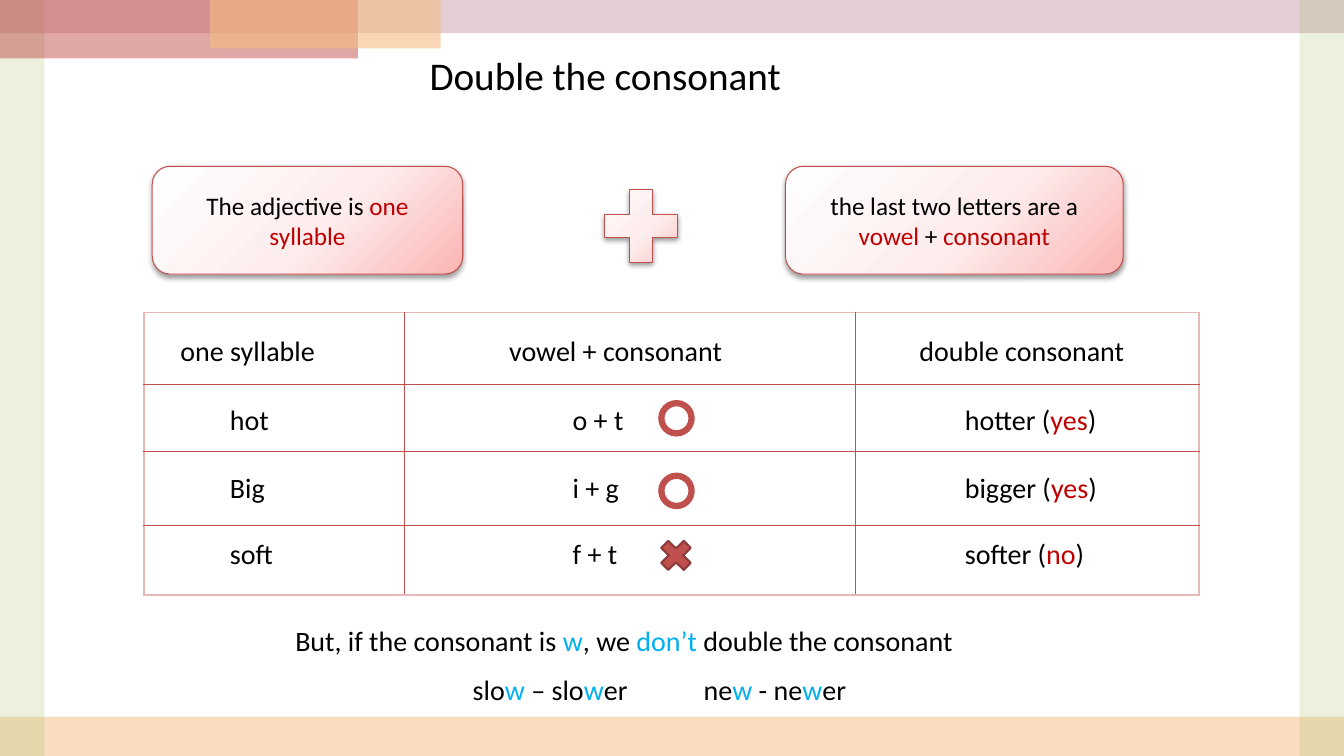
from dataclasses import dataclass
from typing import Any

from lxml.etree import SubElement
from pptx import Presentation
from pptx.dml.color import RGBColor
from pptx.enum.shapes import MSO_SHAPE as Preset
from pptx.enum.text import MSO_ANCHOR as Anchor, MSO_AUTO_SIZE as AutoSize, PP_ALIGN as Align
from pptx.oxml import parse_xml
from pptx.oxml.ns import nsdecls, qn
from pptx.util import Inches, Pt

Runs = list[tuple[str, str]]

COLORS = {
    "black": "000000",
    "white": "FFFFFF",
    "red": "C00000",
    "blue": "00B0F0",
    "brick": "C0504D",
    "dark brick": "8E3B39",
    "rose": "E6B9B8",
    "peach": "F5BC83",
    "mauve": "CC9EAC",
    "green": "9BBB59",
}
CARD_STOPS = {0: "FFFEFE", 55: "FDEDED", 100: "FBB5B4"}


@dataclass(frozen=True)
class Box:
    left: float
    top: float
    width: float
    height: float

    def lengths(self) -> tuple[int, ...]:
        return tuple(Inches(n) for n in (self.left, self.top, self.width, self.height))


@dataclass(frozen=True)
class Band:
    box: Box
    color: str
    opacity: int


@dataclass(frozen=True)
class Card:
    box: Box
    preset: Preset
    runs: Runs


@dataclass(frozen=True)
class Mark:
    box: Box
    preset: Preset
    fill: str
    line: str
    weight: float


@dataclass(frozen=True)
class Note:
    box: Box
    runs: Runs


@dataclass(frozen=True)
class Row:
    height: float
    top_margin: float
    left_margins: tuple[float, ...]
    cells: list[Runs]


BANDS = [
    Band(Box(0, 7.11, 13.33, 0.39), "peach", 50),
    Band(Box(0, 0, 13.33, 0.33), "mauve", 50),
    Band(Box(0, 0, 0.44, 7.5), "green", 20),
    Band(Box(0, 0, 3.55, 0.58), "brick", 50),
    Band(Box(2.08, 0, 2.29, 0.48), "peach", 60),
    Band(Box(12.89, 0, 0.44, 7.5), "green", 20),
]
CARDS = [
    Card(Box(1.51, 1.65, 3.08, 1.07), Preset.ROUNDED_RECTANGLE,
         [("The adjective is ", "black"), ("one syllable", "red")]),
    Card(Box(7.79, 1.65, 3.35, 1.07), Preset.ROUNDED_RECTANGLE,
         [("the last two letters are a ", "black"), ("vowel", "red"),
          (" + ", "black"), ("consonant", "red")]),
    Card(Box(5.87, 1.75, 0.98, 0.98), Preset.MATH_PLUS, []),
]
MARKS = [
    Mark(Box(6.56, 4, 0.3, 0.3), Preset.FLOWCHART_CONNECTOR, "white", "brick", 4.5),
    Mark(Box(6.56, 4.72, 0.3, 0.3), Preset.FLOWCHART_CONNECTOR, "white", "brick", 4.5),
    Mark(Box(6.49, 5.3, 0.43, 0.42), Preset.MATH_MULTIPLY, "brick", "dark brick", 1.5),
]
NOTES = [
    Note(Box(2.83, 6.14, 7.81, 0.44),
         [("But, if the consonant is ", "black"), ("w", "blue"), (", we ", "black"),
          ("don’t", "blue"), (" double the consonant", "black")]),
    Note(Box(4.59, 6.62, 2.2, 0.44),
         [("slo", "black"), ("w", "blue"), (" – slo", "black"), ("w", "blue"), ("er", "black")]),
    Note(Box(6.88, 6.62, 2.5, 0.44),
         [("ne", "black"), ("w", "blue"), (" - ne", "black"), ("w", "blue"), ("er", "black")]),
]
TABLE_BOX = Box(1.43, 3.1, 10.46, 2.8)
COLUMN_WIDTHS = (2.58, 4.47, 3.41)
HEADER_MARGINS = (0.36, 1.04, 0.64)
WORD_MARGINS = (0.85, 1.67, 1.09)


def word_row(height: float, top_margin: float, word: str, ending: str,
             comparative: str, answer: str) -> Row:
    verdict = [(f"{comparative} (", "black"), (answer, "red"), (")", "black")]
    return Row(height, top_margin, WORD_MARGINS,
               [[(word, "black")], [(ending, "black")], verdict])


ROWS = [
    Row(0.71, 0.22, HEADER_MARGINS,
        [[(label, "black")] for label in ("one syllable", "vowel + consonant", "double consonant")]),
    word_row(0.67, 0.2, "hot", "o + t", "hotter", "yes"),
    word_row(0.73, 0.2, "Big", "i + g", "bigger", "yes"),
    word_row(0.69, 0.13, "soft", "f + t", "softer", "no"),
]


def rgb(name: str) -> RGBColor:
    return RGBColor.from_string(COLORS[name])


def apply_format(target: Any, values: dict[str, Any]) -> None:
    for name, value in values.items():
        setattr(target, name, value)


def write_runs(text_frame: Any, runs: Runs, size: int, align: Align = Align.LEFT) -> None:
    paragraph = text_frame.paragraphs[0]
    paragraph.alignment = align
    for text, color in runs:
        run = paragraph.add_run()
        run.text = text
        apply_format(run.font, {"name": "Calibri", "size": Pt(size), "bold": False})
        run.font.color.rgb = rgb(color)


def add_preset(slide: Any, preset: Preset, box: Box, fill: str) -> Any:
    shape = slide.shapes.add_shape(preset, *box.lengths())
    shape.shadow.inherit = False
    shape.fill.solid()
    shape.fill.fore_color.rgb = rgb(fill)
    return shape


def outline(shape: Any, color: str, weight: float) -> None:
    shape.line.color.rgb = rgb(color)
    shape.line.width = Pt(weight)


def add_band(slide: Any, band: Band) -> None:
    shape = add_preset(slide, Preset.RECTANGLE, band.box, band.color)
    shape.line.fill.background()
    color = shape._element.spPr.find(f".//{qn('a:srgbClr')}")
    SubElement(color, qn("a:alpha"), val=str(band.opacity * 1000))


def add_card(slide: Any, card: Card) -> None:
    shape = add_preset(slide, card.preset, card.box, "white")
    outline(shape, "brick", 0.75)
    properties = shape._element.spPr
    stops = "".join(f'<a:gs pos="{position * 1000}"><a:srgbClr val="{color}"/></a:gs>'
                    for position, color in CARD_STOPS.items())
    gradient = parse_xml(
        f'<a:gradFill {nsdecls("a")} rotWithShape="1"><a:gsLst>{stops}</a:gsLst><a:path path="circle">'
        '<a:fillToRect l="-40000" t="-90000" r="140000" b="190000"/></a:path></a:gradFill>')
    properties.replace(properties.find(qn("a:solidFill")), gradient)
    properties.find(qn("a:effectLst")).append(parse_xml(
        f'<a:outerShdw {nsdecls("a")} blurRad="{Pt(4)}" dist="{Pt(2)}" dir="5400000" rotWithShape="0">'
        f'<a:srgbClr val="{COLORS["black"]}"><a:alpha val="40000"/></a:srgbClr></a:outerShdw>'))
    apply_format(shape.text_frame, {"word_wrap": True, "vertical_anchor": Anchor.MIDDLE})
    write_runs(shape.text_frame, card.runs, 18, Align.CENTER)


def add_mark(slide: Any, mark: Mark) -> None:
    outline(add_preset(slide, mark.preset, mark.box, mark.fill), mark.line, mark.weight)


def add_note(slide: Any, note: Note) -> None:
    text_frame = slide.shapes.add_textbox(*note.box.lengths()).text_frame
    text_frame.word_wrap = True
    write_runs(text_frame, note.runs, 20)


def set_borders(cell: Any, outer_sides: dict[str, bool]) -> None:
    for index, (side, is_outer) in enumerate(outer_sides.items()):
        color, weight = ("rose", 1.5) if is_outer else ("brick", 0.75)
        cell._tc.get_or_add_tcPr().insert(index, parse_xml(
            f'<a:ln{side} {nsdecls("a")} w="{Pt(weight)}"><a:solidFill>'
            f'<a:srgbClr val="{COLORS[color]}"/></a:solidFill></a:ln{side}>'))


def add_word_table(slide: Any) -> None:
    last_row, last_column = len(ROWS) - 1, len(COLUMN_WIDTHS) - 1
    table = slide.shapes.add_table(len(ROWS), len(COLUMN_WIDTHS), *TABLE_BOX.lengths()).table
    apply_format(table, {"first_row": False, "horz_banding": False})
    for column, width in zip(table.columns, COLUMN_WIDTHS):
        column.width = Inches(width)
    for r, row in enumerate(ROWS):
        table.rows[r].height = Inches(row.height)
        for c, runs in enumerate(row.cells):
            cell = table.cell(r, c)
            apply_format(cell, {"margin_left": Inches(row.left_margins[c]), "margin_right": 0,
                                "margin_top": Inches(row.top_margin), "margin_bottom": 0,
                                "vertical_anchor": Anchor.TOP})
            cell.fill.background()
            set_borders(cell, {"L": c == 0, "R": c == last_column, "T": r == 0, "B": r == last_row})
            write_runs(cell.text_frame, runs, 20)


def add_title(slide: Any) -> None:
    title = slide.shapes.title
    apply_format(title, dict(zip(("left", "top", "width", "height"), Box(4.16, 0.46, 4.4, 0.57).lengths())))
    apply_format(title.text_frame, {"word_wrap": True, "vertical_anchor": Anchor.TOP,
                                    "auto_size": AutoSize.NONE})
    write_runs(title.text_frame, [("Double the consonant", "black")], 28)


def main() -> None:
    presentation = Presentation()
    apply_format(presentation, {"slide_width": Inches(13.33), "slide_height": Inches(7.5)})
    slide = presentation.slides.add_slide(presentation.slide_layouts[5])
    for band in BANDS:
        add_band(slide, band)
    add_title(slide)
    for card in CARDS:
        add_card(slide, card)
    add_word_table(slide)
    for note in NOTES:
        add_note(slide, note)
    for mark in MARKS:
        add_mark(slide, mark)
    presentation.save("out.pptx")


if __name__ == "__main__":
    main()
